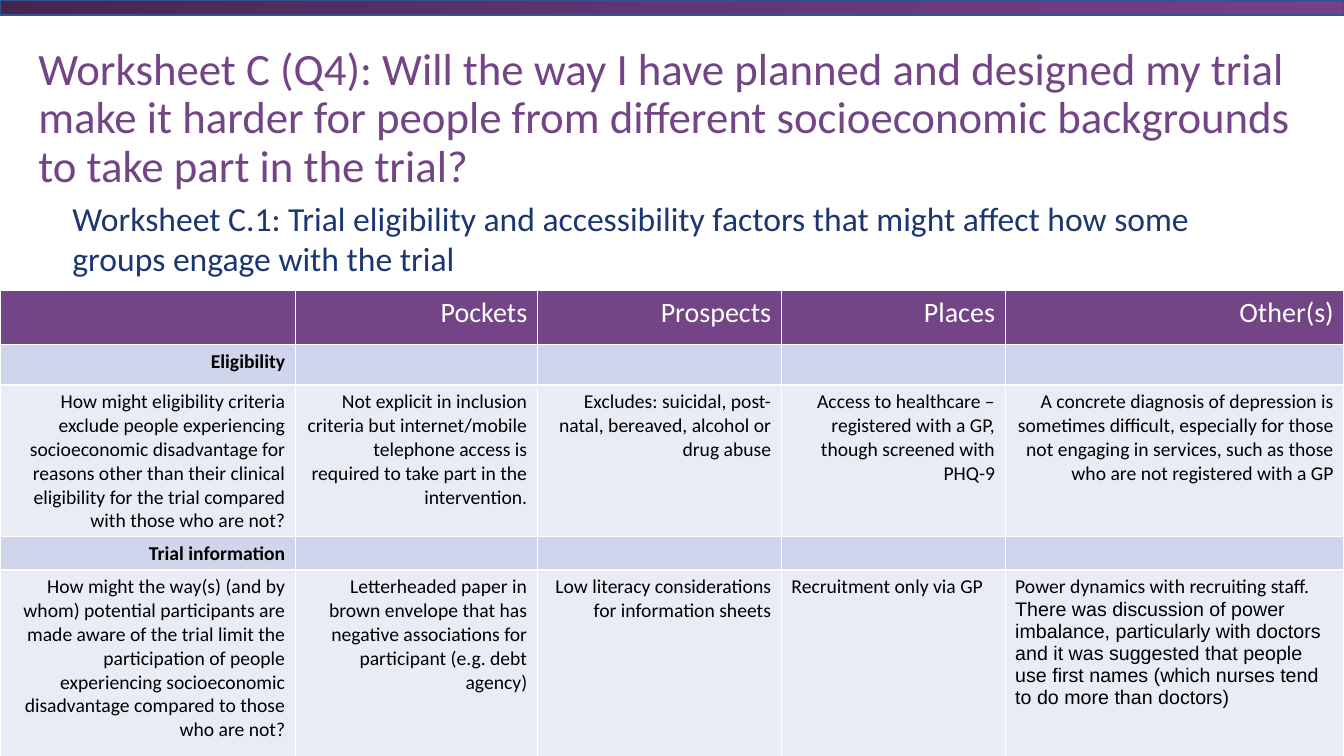
from copy import deepcopy
from dataclasses import dataclass

from pptx import Presentation
from pptx.dml.color import RGBColor
from pptx.enum.shapes import MSO_SHAPE
from pptx.enum.text import MSO_ANCHOR, MSO_AUTO_SIZE, PP_ALIGN
from pptx.util import Inches, Pt

RECTANGLE = MSO_SHAPE.RECTANGLE
MIDDLE = MSO_ANCHOR.MIDDLE
NO_AUTOFIT = MSO_AUTO_SIZE.NONE
LEFT, RIGHT = PP_ALIGN.LEFT, PP_ALIGN.RIGHT


@dataclass(frozen=True)
class Theme:
    font: str = "Calibri"
    second_font: str = "Arial"
    title_size: int = 32
    subtitle_size: int = 24
    header_size: int = 20
    cell_size: int = 14
    purple: str = "734586"
    navy: str = "1B3671"
    white: str = "FFFFFF"
    black: str = "000000"
    section_fill: str = "CFD5EA"
    answer_fill: str = "E9EBF5"
    band_line: str = "32538F"
    band_stops: tuple = ((0, "442550"), (0.5, "623674"), (1, "75408B"))


THEME = Theme()


def style(paragraph, size, color, bold=False, align=LEFT):
    paragraph.alignment = align
    font = paragraph.font
    font.name, font.size, font.bold = THEME.font, Pt(size), bold
    font.color.rgb = RGBColor.from_string(color)


presentation = Presentation()
presentation.slide_width = Inches(13.33)
presentation.slide_height = Inches(7.5)
slide = presentation.slides.add_slide(presentation.slide_layouts[5])

# Gradient band along the top
band = slide.shapes.add_shape(RECTANGLE, 0, 0, Inches(13.33), Inches(0.15))
band.shadow.inherit = False
band.line.color.rgb = RGBColor.from_string(THEME.band_line)
band.line.width = Pt(1)
band.fill.gradient()
band.fill.gradient_angle = 315
stop_list = band.fill._fill._gradFill.gsLst
stop_list.append(deepcopy(stop_list[-1]))
for stop, (position, color) in zip(band.fill.gradient_stops, THEME.band_stops):
    stop.position = position
    stop.color.rgb = RGBColor.from_string(color)

# Title
title = slide.shapes.title
title.left, title.top = Inches(0.33), Inches(0.46)
title.width, title.height = Inches(12.68), Inches(1.45)
frame = title.text_frame
frame.text = (
    "Worksheet C (Q4): Will the way I have planned and designed my trial make it harder "
    "for people from different socioeconomic backgrounds to take part in the trial?"
)
frame.word_wrap = True
frame.auto_size = NO_AUTOFIT
frame.vertical_anchor = MIDDLE
frame.margin_left = frame.margin_right = Inches(0.05)
frame.margin_top = frame.margin_bottom = Inches(0.05)
style(frame.paragraphs[0], THEME.title_size, THEME.purple)
frame.paragraphs[0].line_spacing = 0.9

# Subtitle
subtitle = slide.shapes.add_textbox(Inches(0.62), Inches(1.91), Inches(12.27), Inches(0.91))
subtitle.text_frame.word_wrap = True
subtitle.text_frame.text = (
    "Worksheet C.1: Trial eligibility and accessibility factors that might affect "
    "how some groups engage with the trial"
)
style(subtitle.text_frame.paragraphs[0], THEME.subtitle_size, THEME.navy)

# Worksheet table
COLUMN_WIDTHS = (2.93, 2.4, 2.42, 2.22, 3.36)
ROW_HEIGHTS = (0.54, 0.4, 1.45, 0.33, 1.89)
ROWS = (
    ("", "Pockets", "Prospects", "Places", "Other(s)"),
    ("Eligibility", "", "", "", ""),
    (
        "How might eligibility criteria exclude people experiencing socioeconomic disadvantage "
        "for reasons other than their clinical eligibility for the trial compared with those "
        "who are not?",
        "Not explicit in inclusion criteria but internet/mobile telephone access is required "
        "to take part in the intervention.",
        "Excludes: suicidal, post-natal, bereaved, alcohol or drug abuse",
        "Access to healthcare – registered with a GP, though screened with PHQ-9",
        "A concrete diagnosis of depression is sometimes difficult, especially for those not "
        "engaging in services, such as those who are not registered with a GP",
    ),
    ("Trial information", "", "", "", ""),
    (
        "How might the way(s) (and by whom) potential participants are made aware of the trial "
        "limit the participation of people experiencing socioeconomic disadvantage compared to "
        "those who are not?",
        "Letterheaded paper in brown envelope that has negative associations for participant "
        "(e.g. debt agency)",
        "Low literacy considerations for information sheets",
        "Recruitment only via GP",
        "Power dynamics with recruiting staff. ",
    ),
)
LEFT_ALIGNED = {(4, 3), (4, 4)}

table = slide.shapes.add_table(
    len(ROWS), len(COLUMN_WIDTHS), 0, Inches(2.88), Inches(13.33), Inches(sum(ROW_HEIGHTS))
).table
for column, width in zip(table.columns, COLUMN_WIDTHS):
    column.width = Inches(width)
for row_index, (texts, height) in enumerate(zip(ROWS, ROW_HEIGHTS)):
    table.rows[row_index].height = Inches(height)
    is_header = row_index == 0
    is_section = row_index % 2 == 1
    if is_header:
        fill, size, color = THEME.purple, THEME.header_size, THEME.white
    else:
        fill = THEME.section_fill if is_section else THEME.answer_fill
        size, color = THEME.cell_size, THEME.black
    for column_index, text in enumerate(texts):
        cell = table.cell(row_index, column_index)
        cell.fill.solid()
        cell.fill.fore_color.rgb = RGBColor.from_string(fill)
        cell.text = text
        align = LEFT if (row_index, column_index) in LEFT_ALIGNED else RIGHT
        style(cell.text_frame.paragraphs[0], size, color, is_section, align)

# Closing remark in the last cell, in the second font
remark = table.cell(4, 4).text_frame.paragraphs[0].add_run()
remark.text = (
    "There was discussion of power imbalance, particularly with doctors and it was suggested "
    "that people use first names (which nurses tend to do more than doctors)"
)
remark.font.name = THEME.second_font

presentation.save("out.pptx")
